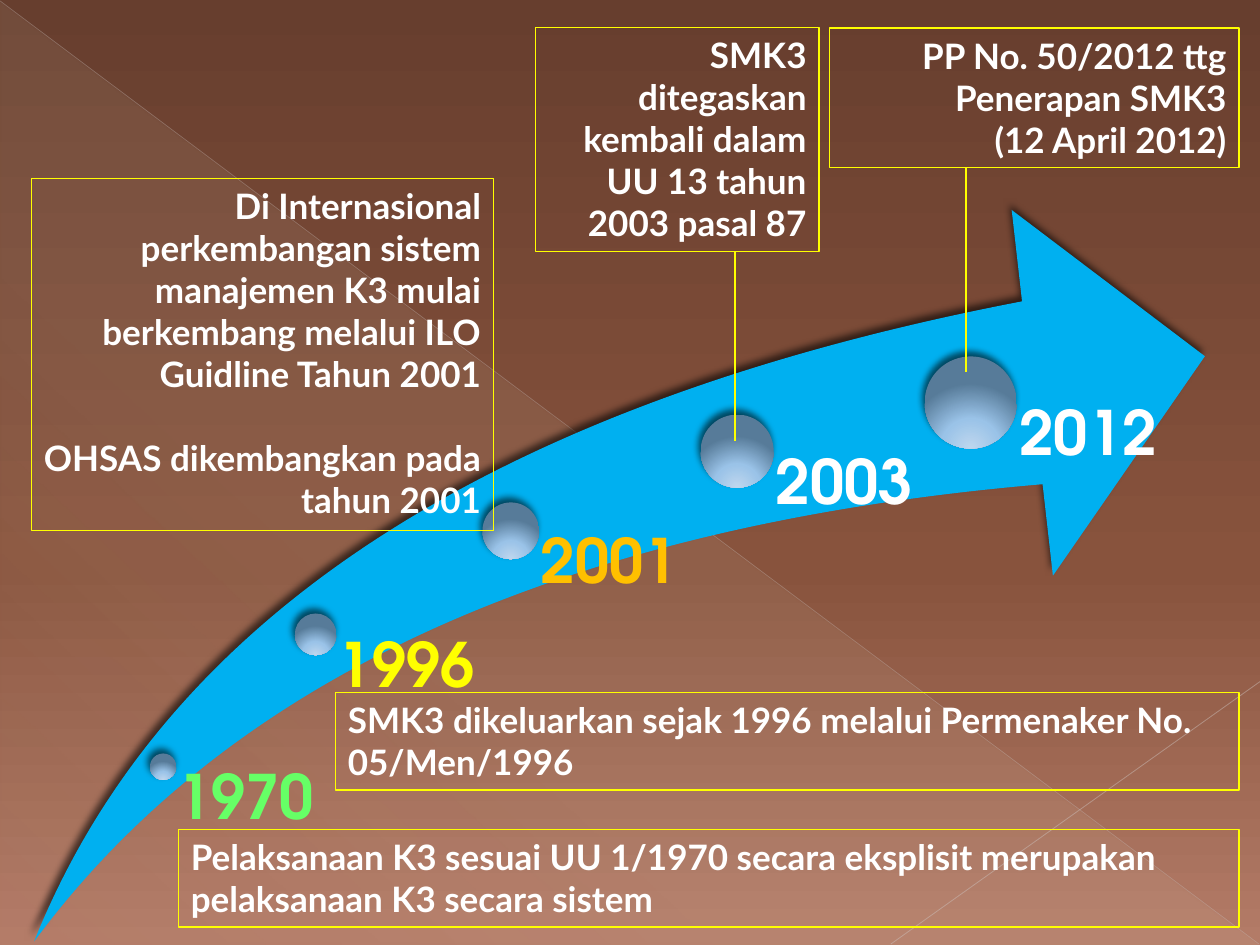
from lxml.etree import SubElement
from pptx import Presentation
from pptx.dml.color import RGBColor
from pptx.enum.shapes import MSO_CONNECTOR as Connector, MSO_SHAPE as Shape
from pptx.enum.text import MSO_AUTO_SIZE as AutoSize, PP_ALIGN as Align
from pptx.oxml.ns import qn
from pptx.util import Pt

WHITE = RGBColor(0xFF, 0xFF, 0xFF)
YELLOW = RGBColor(0xFF, 0xFF, 0x00)
GREEN = RGBColor(0x66, 0xFF, 0x66)
AMBER = RGBColor(0xFF, 0xC0, 0x00)
SKY = RGBColor(0x00, 0xB0, 0xF0)
BLACK = RGBColor(0x00, 0x00, 0x00)
SAND = RGBColor(0xEB, 0xDD, 0xC3)
FAINT = RGBColor(0xC8, 0xBC, 0xB8)
PALE = RGBColor(0xCE, 0xC3, 0xBF)
BROWNS = [(0, RGBColor(0x67, 0x3E, 0x2E), 100),
          (60, RGBColor(0x88, 0x53, 0x3D), 100),
          (100, RGBColor(0xB3, 0x7B, 0x67), 100)]
SHEEN = [(0, SAND, 10), (70, SAND, 8), (100, SAND, 1)]
STEELS = [(0, RGBColor(0xBF, 0xD7, 0xEE), 100),
          (46, RGBColor(0x9A, 0xC3, 0xE8), 100),
          (100, RGBColor(0x57, 0x7B, 0x99), 100)]
BODY_FONT, YEAR_FONT = "Lato", "TeX Gyre Adventor"
ARROW_BOTTOM = 538

MILESTONES = [
    ("1970", GREEN, 93.2, 438.1, 15.1, 88),
    ("1996", YELLOW, 180.4, 362.5, 23.8, 111),
    ("2001", AMBER, 291.9, 303.3, 32.4, 129),
    ("2003", WHITE, 421.2, 257.8, 41.8, 134),
    ("2012", WHITE, 554.7, 230, 52.6, 134),
]
CALLOUTS = [
    (["Pelaksanaan K3 sesuai UU 1/1970 secara eksplisit merupakan pelaksanaan K3 secara sistem"],
     (102, 474, 606, 55.7), Align.LEFT, 0),
    (["SMK3 dikeluarkan sejak 1996 melalui Permenaker No. 05/Men/1996"],
     (191.7, 395.8, 516.3, 55.7), Align.LEFT, 0),
    (["Di Internasional perkembangan sistem manajemen K3 mulai berkembang melalui ILO "
      "Guidline Tahun 2001", "OHSAS dikembangkan pada tahun 2001"],
     (18, 102, 264, 201), Align.RIGHT, 24),
    (["SMK3 ditegaskan kembali dalam UU 13 tahun 2003 pasal 87"],
     (306, 15.7, 162, 128), Align.RIGHT, 0),
    (["PP No. 50/2012 ttg Penerapan SMK3", "(12 April 2012)"],
     (474, 16, 234, 79.7), Align.RIGHT, 0),
]


def add_color(parent, color, opacity):
    node = SubElement(parent, qn("a:srgbClr"), val=str(color))
    if opacity < 100:
        SubElement(node, qn("a:alpha"), val=str(opacity * 1000))


def set_gradient(fill, element, stops, angle=None):
    fill.gradient()
    gradient = element.find(".//" + qn("a:gradFill"))
    for child in list(gradient):
        gradient.remove(child)
    stop_list = SubElement(gradient, qn("a:gsLst"))
    for position, color, opacity in stops:
        stop = SubElement(stop_list, qn("a:gs"), pos=str(position * 1000))
        add_color(stop, color, opacity)
    if angle is not None:
        SubElement(gradient, qn("a:lin"), ang=str(angle * 60000), scaled="0")
    else:
        shade = SubElement(gradient, qn("a:path"), path="circle")
        SubElement(shade, qn("a:fillToRect"), l="50000", t="155000", r="50000", b="-55000")


def add_figure(slide, kind, box, shadowed=True):
    figure = slide.shapes.add_shape(kind, *map(Pt, box))
    figure.line.fill.background()
    figure.shadow.inherit = False
    if shadowed:
        effects = figure._element.spPr.find(qn("a:effectLst"))
        shadow = SubElement(effects, qn("a:outerShdw"), blurRad=str(Pt(4)), dist=str(Pt(3)),
                            dir=str(245 * 60000), algn="ctr", rotWithShape="0")
        add_color(shadow, BLACK, 60)
    return figure


def add_rule(slide, start, end, color=YELLOW, width=0.75, opacity=100):
    rule = slide.shapes.add_connector(Connector.STRAIGHT, *map(Pt, start + end))
    rule.line.color.rgb = color
    rule.line.width = Pt(width)
    if opacity < 100:
        tint = rule._element.spPr.find(".//" + qn("a:srgbClr"))
        SubElement(tint, qn("a:alpha"), val=str(opacity * 1000))
    SubElement(rule._element.spPr, qn("a:effectLst"))


def add_text(slide, paragraphs, box, *, font=BODY_FONT, size=20, color=WHITE,
             align=Align.LEFT, gap=0, spacing=1.0, insets=(7.2, 3.6, 7.2, 3.6),
             outline=None, grow=False):
    holder = slide.shapes.add_textbox(*map(Pt, box))
    if outline is not None:
        holder.line.color.rgb = outline
        holder.line.width = Pt(0.75)
    frame = holder.text_frame
    frame.word_wrap = True
    frame.auto_size = AutoSize.SHAPE_TO_FIT_TEXT if grow else AutoSize.NONE
    (frame.margin_left, frame.margin_top,
     frame.margin_right, frame.margin_bottom) = map(Pt, insets)
    for index, words in enumerate(paragraphs):
        paragraph = frame.add_paragraph() if index else frame.paragraphs[0]
        paragraph.alignment = align
        paragraph.line_spacing = spacing
        if index and gap:
            paragraph.space_before = Pt(gap)
        run = paragraph.add_run()
        run.text = words
        run.font.name = font
        run.font.size = Pt(size)
        run.font.bold = True
        run.font.color.rgb = color


def add_backdrop(slide):
    set_gradient(slide.background.fill, slide._element, BROWNS, 90)
    sheen = add_figure(slide, Shape.RIGHT_TRIANGLE, (0.5, 1, 719, 538.5), shadowed=False)
    set_gradient(sheen.fill, sheen._element, SHEEN, 133)
    add_rule(slide, (0, 0.5), (719.5, 539.5), FAINT, 0.39, 35)
    add_rule(slide, (720, 389.5), (509, 539.5), PALE, 0.47, 45)


def add_arrow(slide):
    arrow = add_figure(slide, Shape.SWOOSH_ARROW, (19.5, 120, 669, 418))
    arrow.adjustments[0] = 0.25
    arrow.adjustments[1] = 0.25
    arrow.fill.solid()
    arrow.fill.fore_color.rgb = SKY


def add_milestone(slide, year, color, x, y, diameter, width):
    radius = diameter / 2
    marker = add_figure(slide, Shape.OVAL, (x - radius, y - radius, diameter, diameter))
    set_gradient(marker.fill, marker._element, STEELS)
    add_text(slide, [year], (x, y, width, ARROW_BOTTOM - y), font=YEAR_FONT, size=35,
             color=color, spacing=0.9, insets=(diameter * 0.53, 0, 0, 0))


def main():
    deck = Presentation()
    deck.slide_width, deck.slide_height = Pt(720), Pt(540)
    slide = deck.slides.add_slide(deck.slide_layouts[6])
    add_backdrop(slide)
    add_arrow(slide)
    for milestone in MILESTONES:
        add_milestone(slide, *milestone)
    for paragraphs, box, align, gap in CALLOUTS:
        add_text(slide, paragraphs, box, align=align, gap=gap, outline=YELLOW, grow=True)
    add_rule(slide, (420, 144), (420, 252))
    add_rule(slide, (552, 95.7), (552, 212.4))
    deck.save("out.pptx")


if __name__ == "__main__":
    main()
